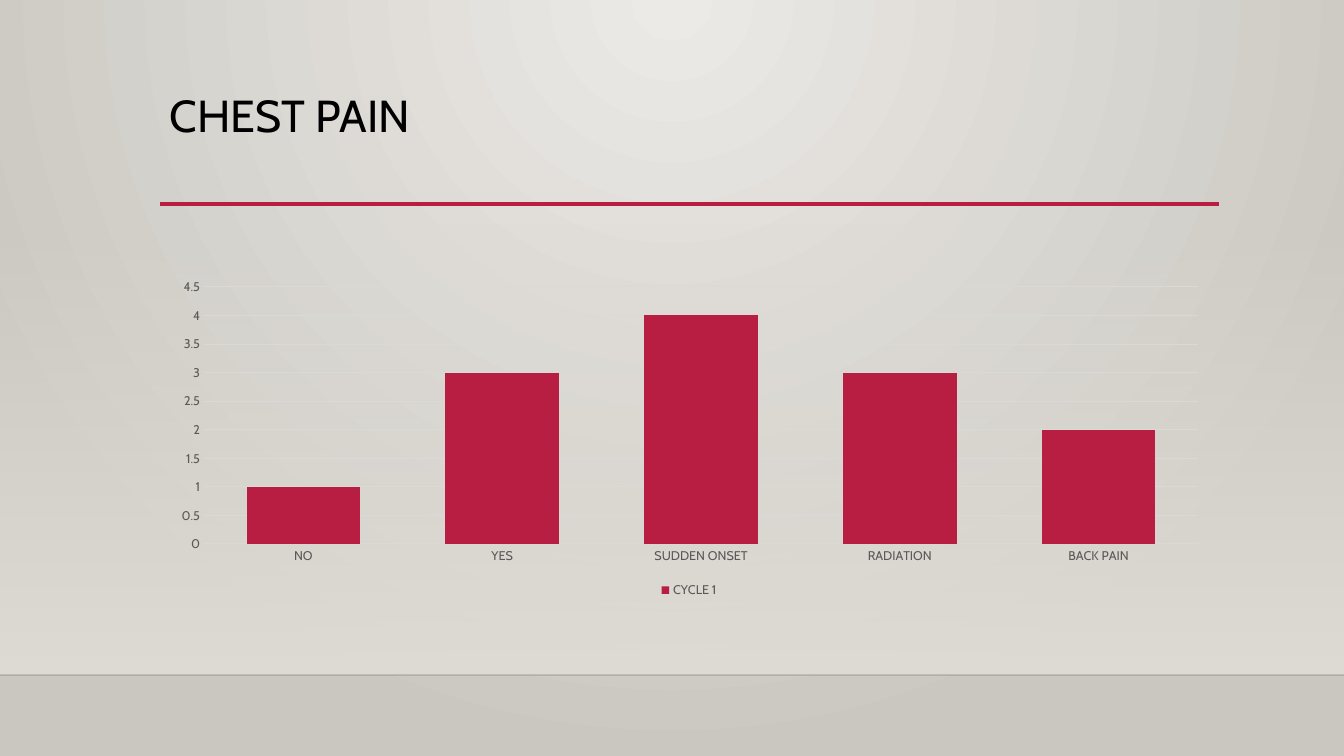
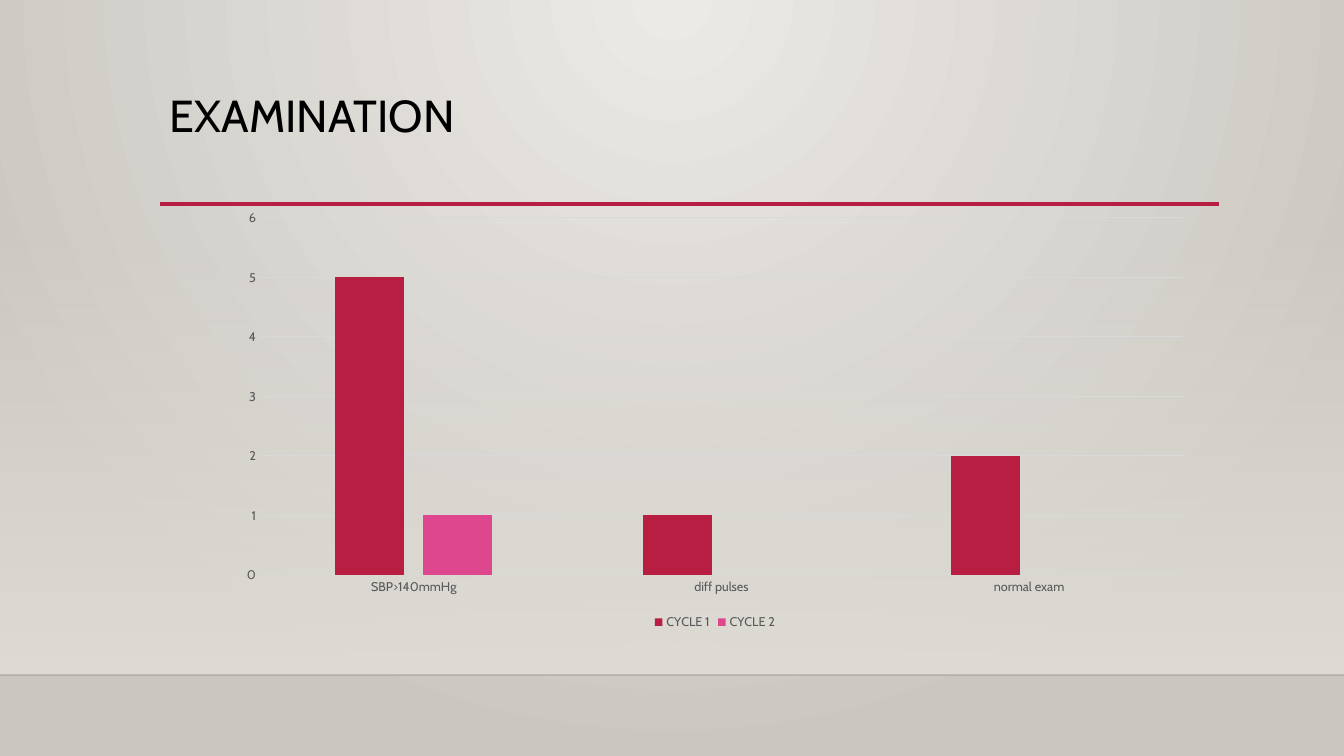
from pptx import Presentation
from pptx.chart.data import CategoryChartData
from pptx.dml.color import RGBColor
from pptx.enum.chart import XL_CHART_TYPE, XL_LEGEND_POSITION, XL_TICK_MARK
from pptx.enum.shapes import MSO_CONNECTOR, MSO_SHAPE
from pptx.enum.text import MSO_ANCHOR
from pptx.oxml import parse_xml
from pptx.oxml.ns import nsdecls, qn
from pptx.util import Emu, Pt

COLUMNS = XL_CHART_TYPE.COLUMN_CLUSTERED
BOTTOM = XL_LEGEND_POSITION.BOTTOM
NO_TICK = XL_TICK_MARK.NONE
STRAIGHT = MSO_CONNECTOR.STRAIGHT
RECTANGLE = MSO_SHAPE.RECTANGLE
TOP = MSO_ANCHOR.TOP

FONT = "Cabin"
COLORS = {
    "glow": "ECEAE7", "edge": "CAC7C1", "wall": "DFDBD5", "floor": "000001",
    "title": "000000", "label": "595959", "grid": "D9D9D9",
    "crimson": "B71E42", "pink": "DE478E",
}

# Content: frame and plot are left, top, width, height in px
SLIDES = [
    {
        "title": "CHEST PAIN",
        "frame": (160, 222, 1058, 380), "plot": (204, 287, 994, 257),
        "maximum": 4.5, "step": 0.5, "gap": 75, "overlap": -25,
        "categories": ["NO", "YES", "SUDDEN ONSET", "RADIATION", "BACK PAIN"],
        "series": [("CYCLE 1", "crimson", [1, 3, 4, 3, 2])],
    },
    {
        "title": "EXAMINATION",
        "frame": (227, 202, 976, 432), "plot": (260, 218, 923, 357),
        "maximum": 6, "step": 1, "gap": 219, "overlap": -27,
        "categories": ["SBP>140mmHg", "diff pulses", "normal exam"],
        "series": [("CYCLE 1", "crimson", [5, 1, 2]),
                   ("CYCLE 2", "pink", [1, None, None])],
    },
]

WIDTH, HEIGHT = 1344, 756
FLOOR_TOP = 675
WALL = (0, 223, WIDTH, FLOOR_TOP - 223)
TITLE = (160, 89, 1058, 116)
RULE = (160, 1219, 204)


def px(value):
    return Emu(round(value * 914400 / 100.8))


def box(lengths):
    return [px(length) for length in lengths]


def color(name):
    return RGBColor.from_string(COLORS[name])


def gradient(stops, shade):
    """Gradient fill XML from (position, colour name, opacity) in percent."""
    marks = "".join(
        f'<a:gs pos="{position * 1000}"><a:srgbClr val="{COLORS[name]}">'
        f'<a:alpha val="{opacity * 1000}"/></a:srgbClr></a:gs>'
        for position, name, opacity in stops)
    return (f'<a:gradFill {nsdecls("a")} rotWithShape="1">'
            f'<a:gsLst>{marks}</a:gsLst>{shade}</a:gradFill>')


def add_line(slide, left, right, top, name, width, opacity=100):
    line = slide.shapes.add_connector(
        STRAIGHT, px(left), px(top), px(right), px(top))
    line.line.width = Pt(width)
    line.line.color.rgb = color(name)
    properties = line._element.spPr
    if opacity < 100:
        properties.find(".//" + qn("a:srgbClr")).append(parse_xml(
            f'<a:alpha {nsdecls("a")} val="{opacity * 1000}"/>'))
    properties.append(parse_xml(f'<a:effectLst {nsdecls("a")}/>'))


def add_backdrop(slide):
    # Radial background
    radial = gradient(
        [(0, "glow", 100), (100, "edge", 100)],
        '<a:path path="circle"><a:fillToRect l="43000" t="0" r="43000" '
        'b="100000"/></a:path>')
    slide.element.cSld.insert(0, parse_xml(
        f'<p:bg {nsdecls("p", "a")}><p:bgPr>{radial}<a:effectLst/>'
        '</p:bgPr></p:bg>'))

    # Wall fading in towards the floor
    wall = slide.shapes.add_shape(RECTANGLE, *box(WALL))
    wall.shadow.inherit = False
    wall.line.fill.background()
    wall._element.spPr.find(qn("a:prstGeom")).addnext(parse_xml(gradient(
        [(0, "wall", 0), (100, "wall", 100)],
        '<a:lin ang="5400000" scaled="0"/>')))

    # Floor edge and title rule
    add_line(slide, 0, WIDTH, FLOOR_TOP, "floor", 1, opacity=20)
    add_line(slide, *RULE, "crimson", 2.5)


def add_title(slide, text):
    frame = slide.shapes.add_textbox(*box(TITLE)).text_frame
    frame.word_wrap = True
    frame.vertical_anchor = TOP
    paragraph = frame.paragraphs[0]
    paragraph.line_spacing = 0.9
    run = paragraph.add_run()
    run.text = text
    style_font(run.font, 32, "title")


def style_font(font, size, name):
    font.name = FONT
    font.size = Pt(size)
    font.color.rgb = color(name)


def place_plot(chart, frame, plot):
    """Fix the inner plot area as fractions of the chart frame."""
    left, top, width, height = frame
    fractions = {
        "x": (plot[0] - left) / width, "y": (plot[1] - top) / height,
        "w": plot[2] / width, "h": plot[3] / height,
    }
    modes = '<c:xMode val="edge"/><c:yMode val="edge"/>'
    values = "".join(f'<c:{key} val="{value:.4f}"/>'
                     for key, value in fractions.items())
    area = chart._chartSpace.chart.plotArea
    for layout in area.findall(qn("c:layout")):
        area.remove(layout)
    area.insert(0, parse_xml(
        f'<c:layout {nsdecls("c")}><c:manualLayout>'
        f'<c:layoutTarget val="inner"/>{modes}{values}'
        '</c:manualLayout></c:layout>'))


def add_column_chart(slide, content):
    data = CategoryChartData()
    data.categories = content["categories"]
    for name, _, values in content["series"]:
        data.add_series(name, values)
    chart = slide.shapes.add_chart(COLUMNS, *box(content["frame"]), data).chart
    chart.has_title = False
    style_font(chart.font, 10, "title")
    place_plot(chart, content["frame"], content["plot"])

    # Columns
    columns = chart.plots[0]
    columns.vary_by_categories = False
    columns.gap_width = content["gap"]
    columns.overlap = content["overlap"]
    for series, (_, fill, _) in zip(columns.series, content["series"]):
        series.format.fill.solid()
        series.format.fill.fore_color.rgb = color(fill)

    # Axes
    category_axis, value_axis = chart.category_axis, chart.value_axis
    for axis in (category_axis, value_axis):
        axis.major_tick_mark = axis.minor_tick_mark = NO_TICK
        style_font(axis.tick_labels.font, 9, "label")
    value_axis.minimum_scale = 0
    value_axis.maximum_scale = content["maximum"]
    value_axis.major_unit = content["step"]
    value_axis.format.line.fill.background()
    for line in (category_axis.format.line,
                 value_axis.major_gridlines.format.line):
        line.width = Pt(0.75)
        line.color.rgb = color("grid")

    # Legend
    chart.has_legend = True
    chart.legend.position = BOTTOM
    chart.legend.include_in_layout = False
    style_font(chart.legend.font, 9, "label")


def main():
    presentation = Presentation()
    presentation.slide_width, presentation.slide_height = box((WIDTH, HEIGHT))
    for content in SLIDES:
        slide = presentation.slides.add_slide(presentation.slide_layouts[6])
        add_backdrop(slide)
        add_title(slide, content["title"])
        add_column_chart(slide, content)
    presentation.save("out.pptx")


if __name__ == "__main__":
    main()
